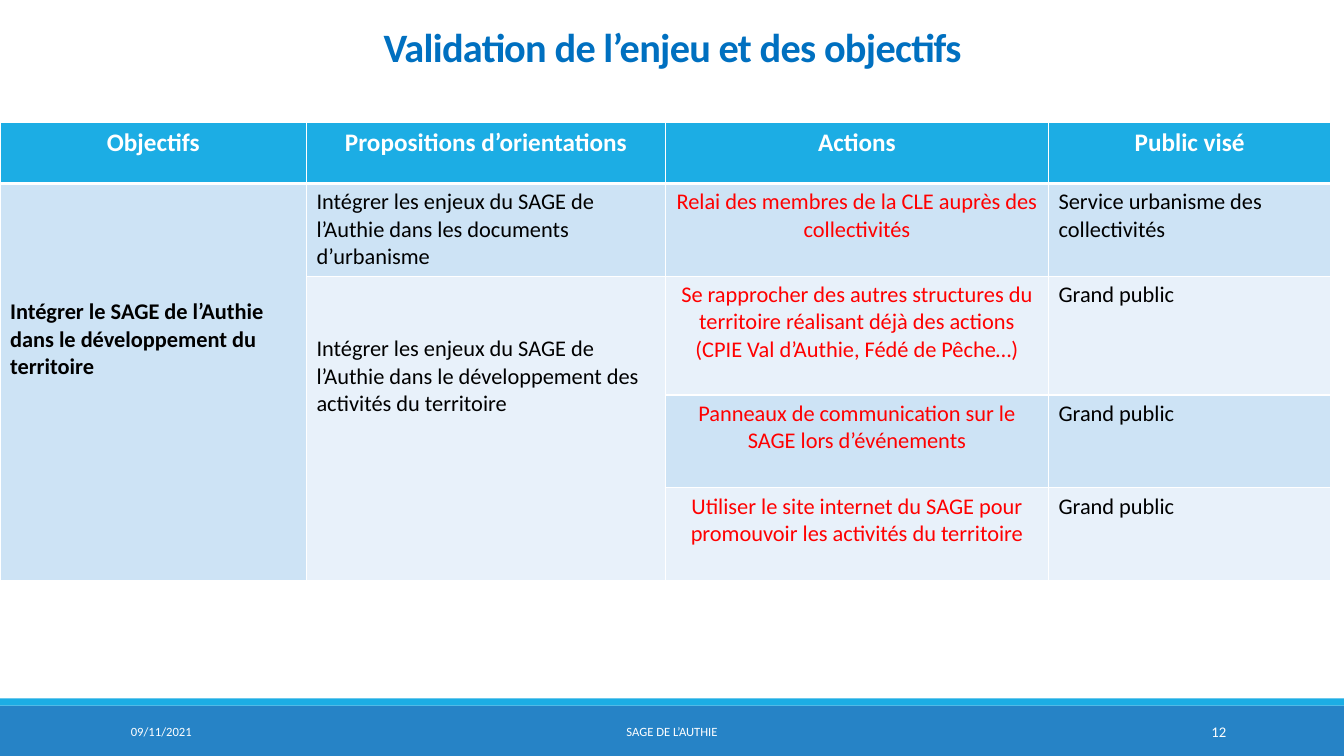
from lxml.etree import SubElement
from pptx import Presentation
from pptx.dml.color import RGBColor
from pptx.enum.shapes import MSO_SHAPE
from pptx.enum.text import MSO_ANCHOR, PP_ALIGN
from pptx.oxml.ns import qn
from pptx.util import Inches, Pt

WHITE = RGBColor(0xFF, 0xFF, 0xFF)
BLACK = RGBColor(0, 0, 0)
RED = RGBColor(0xFF, 0, 0)
TITLE_BLUE = RGBColor(0x00, 0x70, 0xC0)
CYAN = RGBColor(0x1C, 0xAD, 0xE4)
FOOTER_BLUE = RGBColor(0x26, 0x83, 0xC6)
BANDS = [RGBColor(0xCD, 0xE3, 0xF5), RGBColor(0xE8, 0xF1, 0xFA)]

TITLE = "Validation de l’enjeu et des objectifs"
ROWS = [
    ["Objectifs", "Propositions d’orientations", "Actions", "Public visé"],
    ["Intégrer le SAGE de l’Authie dans le développement du territoire",
     "Intégrer les enjeux du SAGE de l’Authie dans les documents d’urbanisme",
     "Relai des membres de la CLE auprès des collectivités",
     "Service urbanisme des collectivités"],
    ["",
     "Intégrer les enjeux du SAGE de l’Authie dans le développement des activités du territoire",
     "Se rapprocher des autres structures du territoire réalisant déjà des actions "
     "(CPIE Val d’Authie, Fédé de Pêche…)",
     "Grand public"],
    ["", "", "Panneaux de communication sur le SAGE lors d’événements", "Grand public"],
    ["", "", "Utiliser le site internet du SAGE pour promouvoir les activités du territoire",
     "Grand public"],
]
COLUMN_WIDTHS = [3.04, 3.56, 3.8, 2.8]
ROW_HEIGHTS = [0.61, 0.92, 1.18, 0.92, 0.92]
MERGED_TOP_MARGINS = {(1, 0): 1.14, (2, 1): 0.59}
FOOTERS = [
    ("09/11/2021", 1.2, 2.7, 9, PP_ALIGN.LEFT),
    ("SAGE DE L’AUTHIE", 4.03, 5.27, 9, PP_ALIGN.CENTER),
    ("12", 10.83, 1.43, 10.5, PP_ALIGN.RIGHT),
]
BARS = [(7, 0.5, FOOTER_BLUE), (6.93, 0.07, CYAN)]


def write(frame, text, size, color, align, bold=False):
    """Fill a text frame with one formatted paragraph."""
    frame.word_wrap = True
    paragraph = frame.paragraphs[0]
    paragraph.text = text
    paragraph.alignment = align
    font = paragraph.font
    font.name, font.size, font.bold = "Calibri", Pt(size), bold
    font.color.rgb = color
    return paragraph


def add_borders(cell, bottom_width):
    """Draw white borders around a table cell."""
    properties = cell._tc.get_or_add_tcPr()
    for side, width in (("lnL", 1), ("lnR", 1), ("lnT", 1), ("lnB", bottom_width)):
        border = SubElement(properties, qn(f"a:{side}"), w=str(Pt(width)))
        SubElement(SubElement(border, qn("a:solidFill")), qn("a:srgbClr"), val=str(WHITE))


def add_objectives(slide):
    """Add the table of objectives, orientations, actions and audiences."""
    table = slide.shapes.add_table(
        len(ROWS), len(COLUMN_WIDTHS), 0, Inches(1.21),
        Inches(sum(COLUMN_WIDTHS)), Inches(sum(ROW_HEIGHTS))).table
    for column, width in zip(table.columns, COLUMN_WIDTHS):
        column.width = Inches(width)
    for row, height in zip(table.rows, ROW_HEIGHTS):
        row.height = Inches(height)
    for r, texts in enumerate(ROWS):
        for c, text in enumerate(texts):
            cell = table.cell(r, c)
            header = r == 0
            add_borders(cell, 3 if header else 1)
            cell.fill.solid()
            cell.fill.fore_color.rgb = CYAN if header else BANDS[(r - 1) % 2]
            if text:
                color = WHITE if header else RED if c == 2 else BLACK
                align = PP_ALIGN.CENTER if header or c == 2 else PP_ALIGN.LEFT
                write(cell.text_frame, text, 18 if header else 16, color, align,
                      header or c == 0)
    for (r, c), margin in MERGED_TOP_MARGINS.items():
        table.cell(r, c).merge(table.cell(len(ROWS) - 1, c))
        table.cell(r, c).margin_top = Inches(margin)


def main():
    """Build and save the slide."""
    deck = Presentation()
    deck.slide_width, deck.slide_height = Inches(13.33), Inches(7.5)
    slide = deck.slides.add_slide(deck.slide_layouts[5])

    for top, height, color in BARS:
        bar = slide.shapes.add_shape(
            MSO_SHAPE.RECTANGLE, 0, Inches(top), deck.slide_width, Inches(height))
        bar.shadow.inherit = False
        bar.fill.solid()
        bar.fill.fore_color.rgb = color
        bar.line.fill.background()

    add_objectives(slide)

    title = slide.shapes.title
    title.left, title.top = Inches(1.17), Inches(0.19)
    title.width, title.height = Inches(11), Inches(0.56)
    heading = write(title.text_frame, TITLE, 28.8, TITLE_BLUE, PP_ALIGN.CENTER, True)
    heading.line_spacing = 0.85
    heading.runs[0].font._element.set("spc", "-50")
    title.text_frame.vertical_anchor = MSO_ANCHOR.BOTTOM

    for text, left, width, size, align in FOOTERS:
        footer = slide.shapes.add_textbox(
            Inches(left), Inches(7.06), Inches(width), Inches(0.4)).text_frame
        write(footer, text, size, WHITE, align)
        footer.vertical_anchor = MSO_ANCHOR.MIDDLE

    deck.save("out.pptx")


if __name__ == "__main__":
    main()
